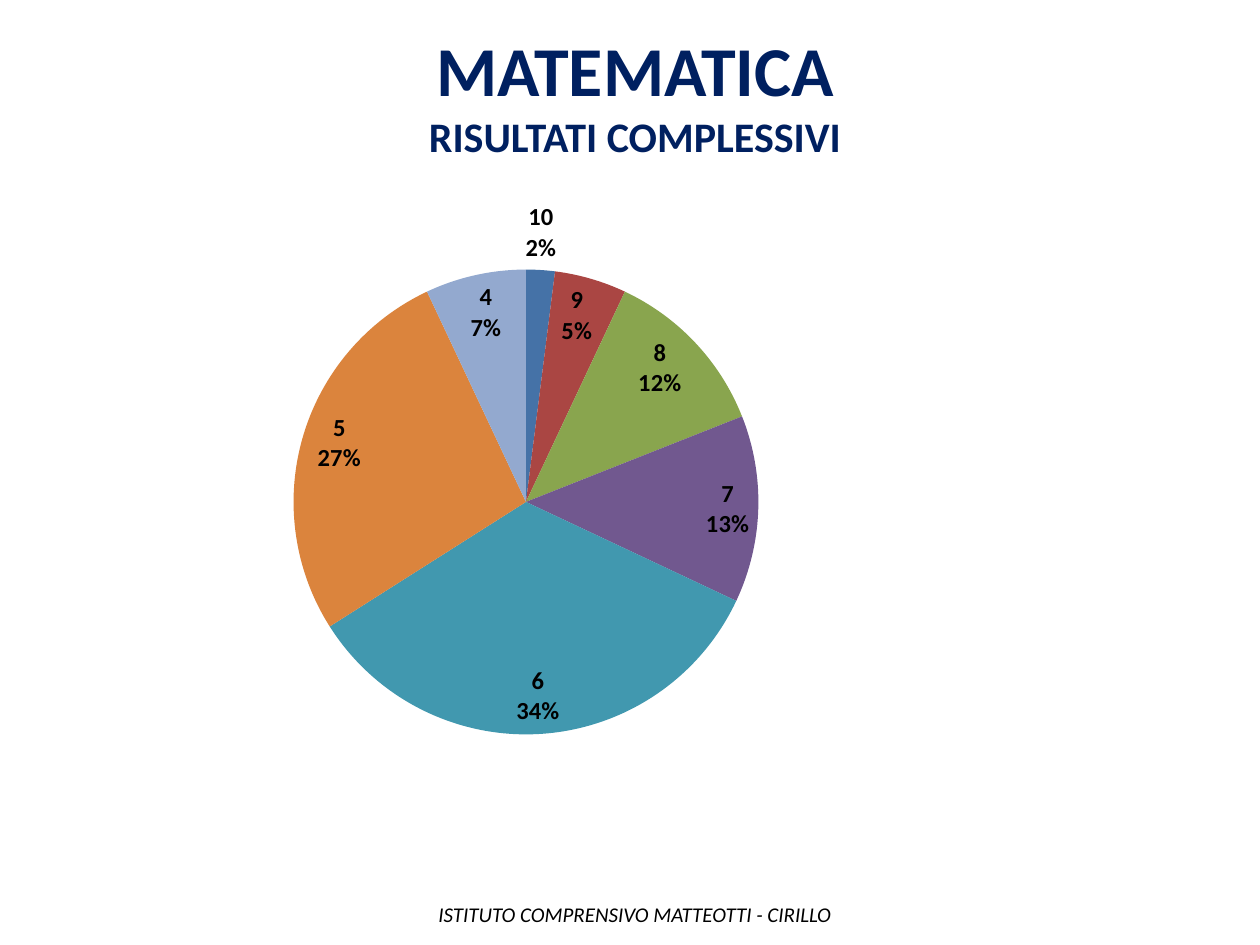
from lxml import etree
from pptx import Presentation
from pptx import util as u
from pptx.chart.data import CategoryChartData
from pptx.dml.color import RGBColor
from pptx.enum import chart as ch, text
from pptx.oxml.ns import qn

COLORS = {"title": "002060", "text": "000000"}
# Mark, percentage of pupils, slice colour
RESULTS = [
    ("10", 2, "4572A7"),
    ("9", 5, "AA4643"),
    ("8", 12, "89A54E"),
    ("7", 13, "71588F"),
    ("6", 34, "4198AF"),
    ("5", 27, "DB843D"),
    ("4", 7, "93A9CF"),
]


class Deck:
    font = "Calibri"

    def __init__(self, prs):
        self.prs = prs
        self.slide = prs.slides.add_slide(prs.slide_layouts[5])

    def format_font(self, font, color, **values):
        for name, value in {"name": self.font, **values}.items():
            setattr(font, name, value)
        font.color.rgb = RGBColor.from_string(COLORS[color])

    def place(self, sp, box):
        for name, value in zip(("left", "top", "width", "height"), box):
            setattr(sp, name, u.Inches(value))

    def title(self, box, lines):
        sp = self.slide.shapes.title
        self.place(sp, box)
        tf = sp.text_frame
        frame = {"word_wrap": True, "auto_size": text.MSO_AUTO_SIZE.NONE,
                 "vertical_anchor": text.MSO_ANCHOR.TOP}
        for name, value in frame.items():
            setattr(tf, name, value)
        for i, (line, size) in enumerate(lines):
            p = tf.add_paragraph() if i else tf.paragraphs[0]
            p.alignment = text.PP_ALIGN.CENTER
            p.space_before = u.Pt(0)
            r = p.add_run()
            r.text = line
            self.format_font(r.font, "title", size=u.Pt(size), bold=True)

    def text_box(self, box, line, **values):
        sp = self.slide.shapes.add_textbox(*map(u.Inches, box))
        tf = sp.text_frame
        tf.word_wrap = True
        r = tf.paragraphs[0].add_run()
        r.text = line
        self.format_font(r.font, "text", **values)

    def pie(self, box, pie_box, results):
        data = CategoryChartData()
        data.categories = [mark for mark, _, _ in results]
        data.add_series("Risultati", [value for _, value, _ in results])
        chart = self.slide.shapes.add_chart(
            ch.XL_CHART_TYPE.PIE, *map(u.Inches, box), data).chart
        chart.has_legend = chart.has_title = False
        self.format_font(chart.font, "text", size=u.Pt(18))
        plot = chart.plots[0]
        plot.vary_by_categories = True
        for i, (_, _, color) in enumerate(results):
            fill = plot.series[0].points[i].format.fill
            fill.solid()
            fill.fore_color.rgb = RGBColor.from_string(color)

        # Labels: mark above percentage
        plot.has_data_labels = True
        labels = plot.data_labels
        show = {"show_category_name": True, "show_percentage": True,
                "show_value": False, "number_format": "0%",
                "number_format_is_linked": False,
                "position": ch.XL_LABEL_POSITION.BEST_FIT}
        for name, value in show.items():
            setattr(labels, name, value)
        self.format_font(labels.font, "text", size=u.Pt(14), bold=True)
        separator = etree.Element(qn("c:separator"))
        separator.text = "\n"
        labels._element.find(qn("c:showBubbleSize")).addnext(separator)

        # Fixed position of the pie, as fractions of the chart
        area = chart._chartSpace.chart.plotArea
        for old in area.findall(qn("c:layout")):
            area.remove(old)
        layout = etree.Element(qn("c:layout"))
        manual = etree.SubElement(layout, qn("c:manualLayout"))
        left, top, width, height = box
        x, y, w, h = pie_box
        for tag, value in (("layoutTarget", "inner"), ("xMode", "edge"),
                           ("yMode", "edge"), ("x", (x - left) / width),
                           ("y", (y - top) / height),
                           ("w", w / width), ("h", h / height)):
            etree.SubElement(manual, qn("c:" + tag)).set("val", str(value))
        area.insert(0, layout)


def main():
    prs = Presentation()
    prs.slide_width, prs.slide_height = u.Inches(10), u.Inches(7.5)
    deck = Deck(prs)

    # Title
    deck.title((1.38, 0.16, 7.32, 1.18),
               [("MATEMATICA", 40), ("RISULTATI COMPLESSIVI", 24)])
    # Results by mark
    deck.pie((0.43, 1.47, 7.9, 4.51), (2.33, 2.14, 3.69, 3.69), RESULTS)
    # School name
    deck.text_box((3.38, 7.11, 3.45, 0.3),
                  "ISTITUTO COMPRENSIVO MATTEOTTI - CIRILLO",
                  size=u.Pt(12), italic=True)

    prs.save("out.pptx")


if __name__ == "__main__":
    main()
